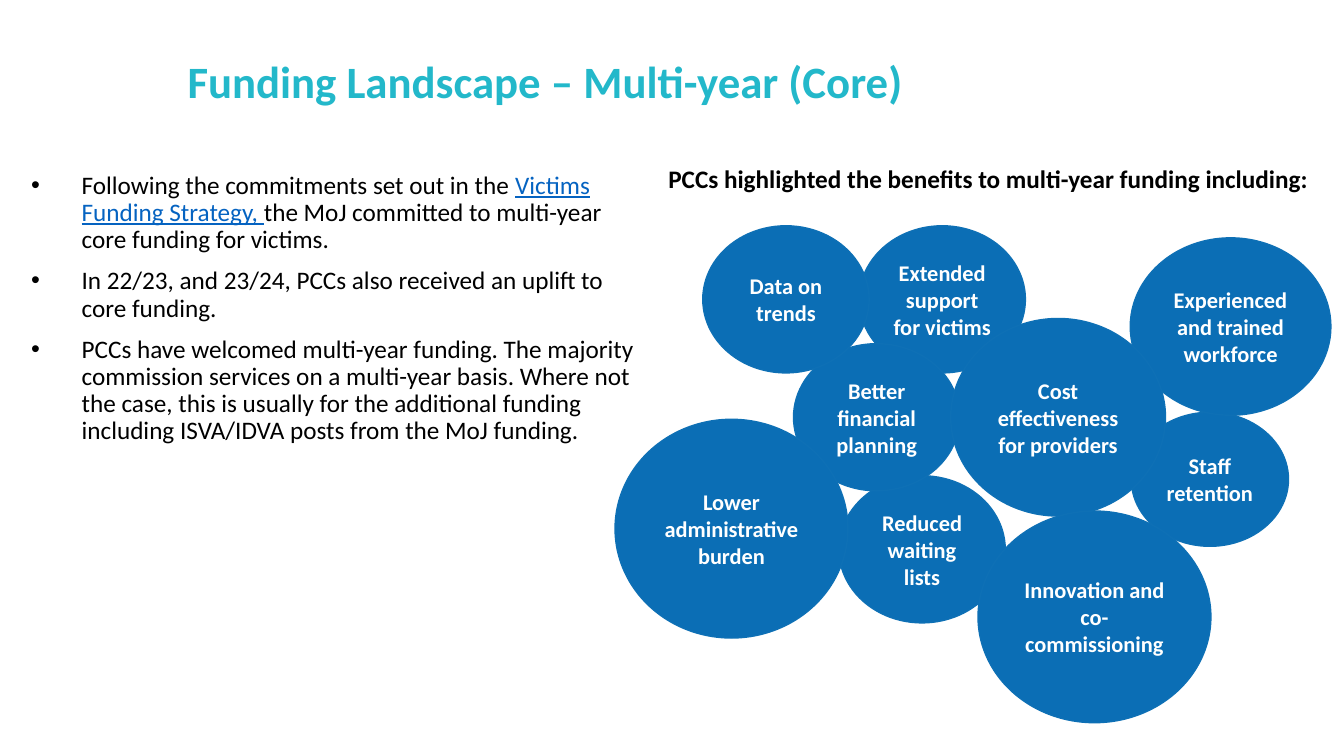
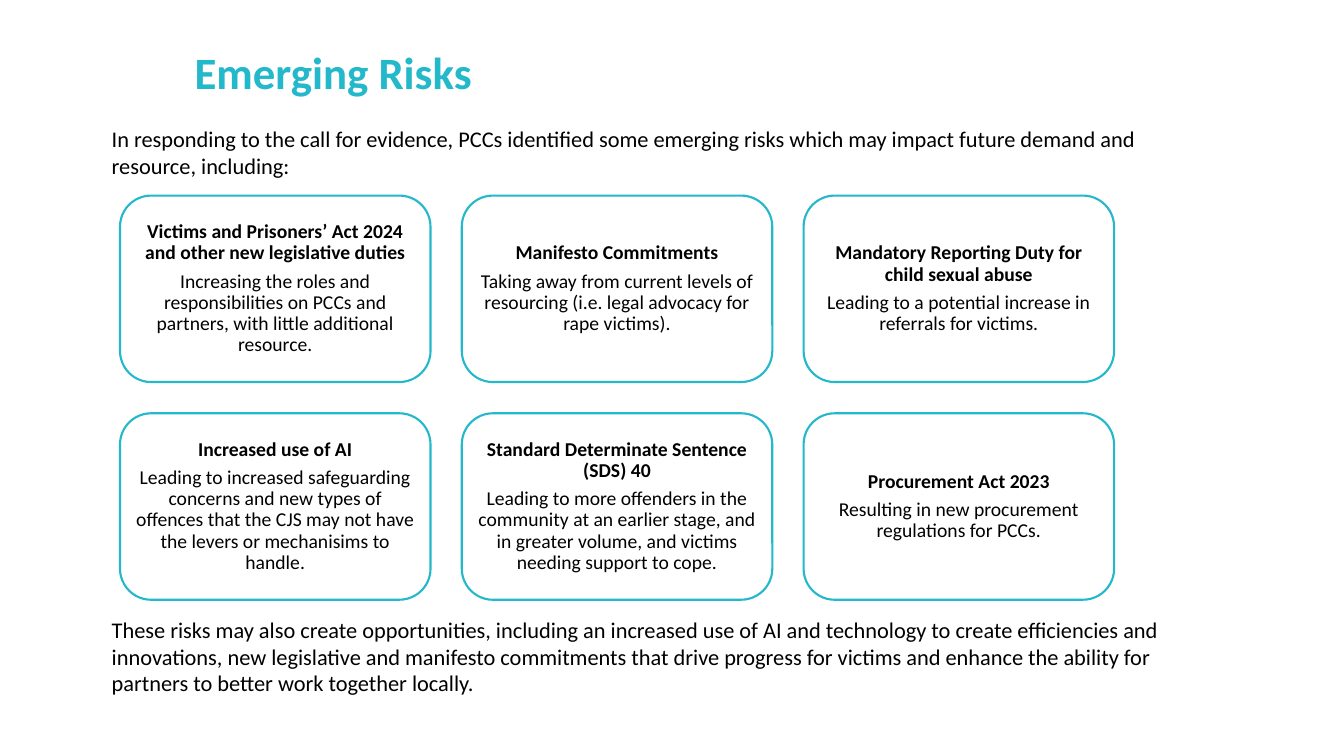
from lxml import etree
from pptx import Presentation
from pptx.dml.color import RGBColor
from pptx.enum.shapes import MSO_SHAPE
from pptx.enum.text import MSO_ANCHOR, MSO_AUTO_SIZE, PP_ALIGN
from pptx.oxml.ns import qn
from pptx.util import Pt

PX = 9144  # EMU in one px, 100 px to the inch

TEAL = RGBColor(0x23, 0xB8, 0xCA)
BLUE = RGBColor(0x0B, 0x6E, 0xB5)
BLUE_EDGE = RGBColor(0x0E, 0x70, 0xB5)
LINK_BLUE = RGBColor(0x05, 0x63, 0xC1)
BLACK = RGBColor(0, 0, 0)
WHITE = RGBColor(0xFF, 0xFF, 0xFF)

TITLE = {"size": Pt(32), "bold": True, "color": TEAL}
BODY = {"size": Pt(18), "color": BLACK}
LINK = {"size": Pt(18), "color": LINK_BLUE, "underline": True}
SUBHEAD = {"size": Pt(18), "bold": True, "color": BLACK}
BUBBLE = {"size": Pt(16), "bold": True, "color": WHITE}
NOTE = {"size": Pt(16), "color": BLACK}
CARD_HEAD = {"size": Pt(14), "bold": True, "color": BLACK}
CARD_TEXT = {"size": Pt(14), "color": BLACK}


def place(shape, left, top, width, height, anchor=MSO_ANCHOR.TOP):
    """Set the position of a shape and the behaviour of its text."""
    box = {"left": left, "top": top, "width": width, "height": height}
    for name, value in box.items():
        setattr(shape, name, value * PX)
    frame = shape.text_frame
    frame.word_wrap = True
    frame.auto_size = MSO_AUTO_SIZE.NONE
    frame.vertical_anchor = anchor
    return frame


def write(paragraph, text, style, **layout):
    """Add a formatted run and set the paragraph layout."""
    for name, value in layout.items():
        setattr(paragraph, name, value)
    run = paragraph.add_run()
    run.text = text
    run.font.name = "Calibri"
    for name, value in style.items():
        if name == "color":
            run.font.color.rgb = value
        else:
            setattr(run.font, name, value)


presentation = Presentation()
presentation.slide_width = 1333 * PX
presentation.slide_height = 750 * PX
content_layout = presentation.slide_layouts[1]
title_layout = presentation.slide_layouts[5]

# Slides and their titles
slides = []
for layout, text, left, top in [
    (content_layout, "Funding Landscape – Multi-year (Core)", 176, 37),
    (title_layout, "Emerging Risks", 183, 28),
]:
    slide = presentation.slides.add_slide(layout)
    frame = place(slide.shapes.title, left, top, 1150, 92, MSO_ANCHOR.MIDDLE)
    write(frame.paragraphs[0], text, TITLE, alignment=PP_ALIGN.LEFT, line_spacing=0.9)
    slides.append(slide)
funding, risks = slides

# Funding: bullet list
bullets = [
    [
        ("Following the commitments set out in the ", BODY),
        ("Victims Funding Strategy, ", LINK),
        ("the MoJ committed to multi-year core funding for victims.", BODY),
    ],
    [("In 22/23, and 23/24, PCCs also received an uplift to core funding.", BODY)],
    [
        (
            "PCCs have welcomed multi-year funding. The majority commission services "
            "on a multi-year basis. Where not the case, this is usually for the "
            "additional funding including ISVA/IDVA posts from the MoJ funding.",
            BODY,
        )
    ],
]
frame = place(funding.placeholders[1], 21, 166, 624, 476)
for index, runs in enumerate(bullets):
    paragraph = frame.paragraphs[0] if index == 0 else frame.add_paragraph()
    properties = paragraph._p.get_or_add_pPr()
    properties.set("marL", str(50 * PX))
    properties.set("indent", str(-50 * PX))
    etree.SubElement(properties, qn("a:buFont"), typeface="Arial")
    etree.SubElement(properties, qn("a:buChar"), char="•")
    for text, style in runs:
        write(paragraph, text, style, line_spacing=0.9,
              space_before=Pt(10 if index else 0))

# Funding: heading over the bubbles
heading = funding.shapes.add_textbox(0, 0, 0, 0)
frame = place(heading, 653, 157, 667, 40)
write(frame.paragraphs[0],
      "PCCs highlighted the benefits to multi-year funding including:", SUBHEAD)

# Funding: benefit bubbles, from back to front
benefits = [
    ("Staff retention", 1122, 409, 156, 133),
    ("Experienced and trained workforce", 1121, 236, 199, 176),
    ("Reduced waiting lists", 832, 472, 165, 146),
    ("Extended support for victims", 852, 224, 165, 146),
    ("Better financial planning", 787, 341, 165, 146),
    ("Lower administrative burden", 610, 416, 231, 217),
    ("Cost effectiveness for providers", 943, 316, 213, 196),
    ("Innovation and co-commissioning", 970, 507, 231, 210),
    ("Data on trends", 697, 224, 165, 146),
]
for text, *box in benefits:
    bubble = funding.shapes.add_shape(MSO_SHAPE.OVAL, 0, 0, 0, 0)
    bubble.shadow.inherit = False
    bubble.fill.solid()
    bubble.fill.fore_color.rgb = BLUE
    bubble.line.color.rgb = BLUE_EDGE
    bubble.line.width = Pt(1)
    frame = place(bubble, *box, MSO_ANCHOR.MIDDLE)
    write(frame.paragraphs[0], text, BUBBLE, alignment=PP_ALIGN.CENTER)

# Risks: grid of cards
COLUMNS = 3
CARD_WIDTH, CARD_HEIGHT, GAP = 308, 185, 31
cards = [
    ("Victims and Prisoners’ Act 2024 and other new legislative duties",
     "Increasing the roles and responsibilities on PCCs and partners, with little "
     "additional resource."),
    ("Manifesto Commitments",
     "Taking away from current levels of resourcing (i.e. legal advocacy for rape "
     "victims)."),
    ("Mandatory Reporting Duty for child sexual abuse",
     "Leading to a potential increase in referrals for victims."),
    ("Increased use of AI",
     "Leading to increased safeguarding concerns and new types of offences that the "
     "CJS may not have the levers or mechanisims to handle."),
    ("Standard Determinate Sentence (SDS) 40",
     "Leading to more offenders in the community at an earlier stage, and in greater "
     "volume, and victims needing support to cope."),
    ("Procurement Act 2023",
     "Resulting in new procurement regulations for PCCs."),
]
for index, (head, text) in enumerate(cards):
    row, column = divmod(index, COLUMNS)
    card = risks.shapes.add_shape(MSO_SHAPE.ROUNDED_RECTANGLE, 0, 0, 0, 0)
    card.shadow.inherit = False
    card.fill.background()
    card.line.color.rgb = TEAL
    card.line.width = Pt(1.5)
    frame = place(card, 119 + column * (CARD_WIDTH + GAP),
                  194 + row * (CARD_HEIGHT + GAP),
                  CARD_WIDTH, CARD_HEIGHT, MSO_ANCHOR.MIDDLE)
    for side in ("left", "top", "right", "bottom"):
        setattr(frame, f"margin_{side}", 6 * PX)
    write(frame.paragraphs[0], head, CARD_HEAD, alignment=PP_ALIGN.CENTER,
          line_spacing=0.9, space_after=Pt(5))
    write(frame.add_paragraph(), text, CARD_TEXT, alignment=PP_ALIGN.CENTER,
          line_spacing=0.9)

# Risks: text above and below the cards
notes = [
    ("In responding to the call for evidence, PCCs identified some emerging risks "
     "which may impact future demand and resource, including:", 119, 64),
    ("These risks may also create opportunities, including an increased use of AI and "
     "technology to create efficiencies and innovations, new legislative and manifesto "
     "commitments that drive progress for victims and enhance the ability for partners "
     "to better work together locally.", 606, 91),
]
for text, top, height in notes:
    note = risks.shapes.add_textbox(0, 0, 0, 0)
    frame = place(note, 101, top, 1088, height)
    write(frame.paragraphs[0], text, NOTE)

presentation.save("out.pptx")
